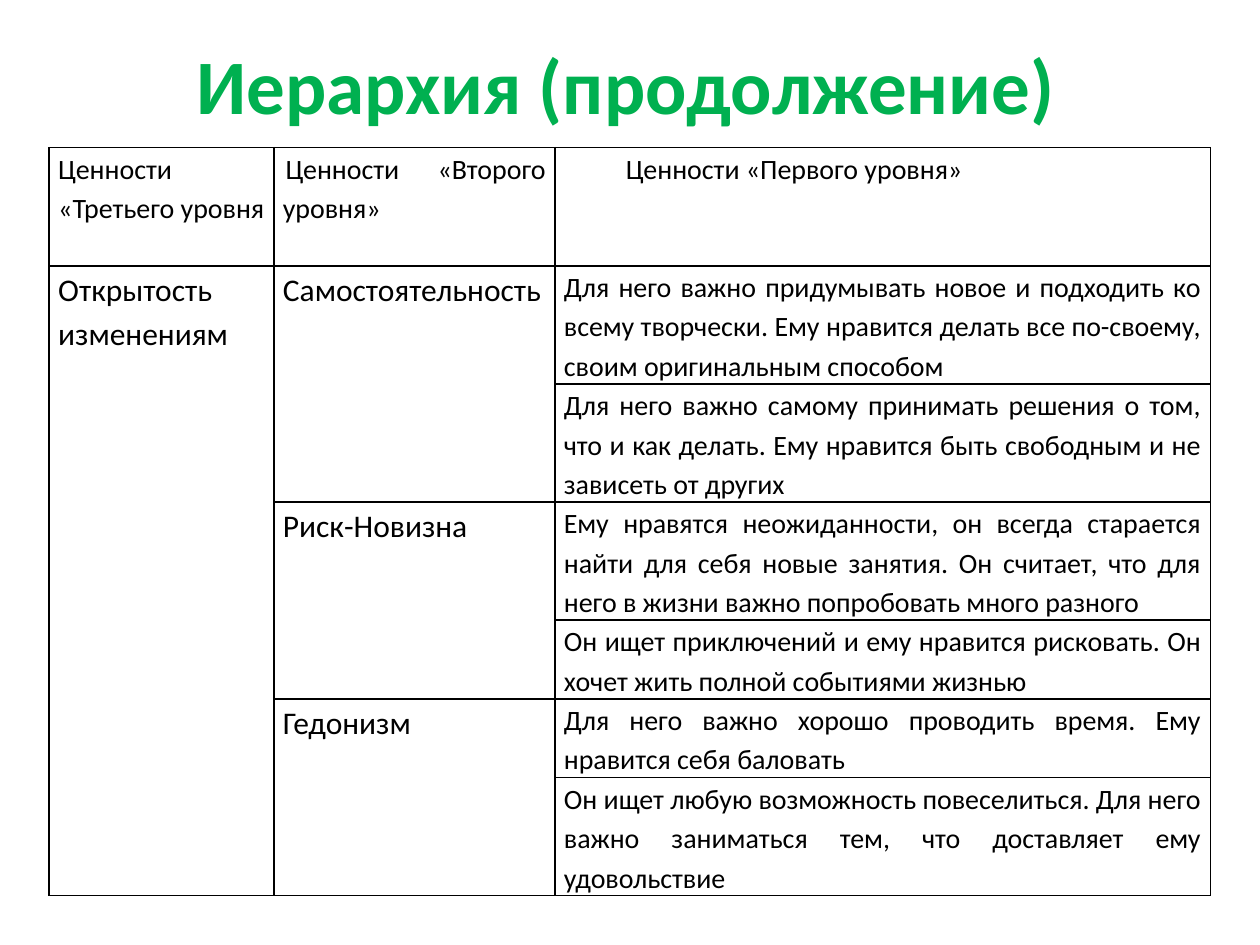
import pptx
import pptx.util
import pptx.dml.color
import pptx.enum.text
from lxml import etree
from pptx.oxml.ns import qn

Pt = pptx.util.Pt
ALIGN = pptx.enum.text.PP_ALIGN
ANCHOR = pptx.enum.text.MSO_ANCHOR
GREEN = pptx.dml.color.RGBColor(0x00, 0xB0, 0x50)
BLACK = pptx.dml.color.RGBColor(0x00, 0x00, 0x00)
FONT = "Calibri"

TITLE = "Иерархия (продолжение)"
# Header text and first-line indent
HEADS = [
    ("Ценности «Третьего уровня", 0),
    ("Ценности «Второго уровня»", 1.5),
    ("Ценности «Первого уровня»", 35.4),
]
THIRD = "Открытость изменениям"
GROUPS = [
    ("Самостоятельность", [
        "Для него важно придумывать новое и подходить ко всему творчески. "
        "Ему нравится делать все по-своему, своим оригинальным способом",
        "Для него важно самому принимать решения о том, что и как делать. "
        "Ему нравится быть свободным и не зависеть от других",
    ]),
    ("Риск-Новизна", [
        "Ему нравятся неожиданности, он всегда старается найти для себя новые "
        "занятия. Он считает, что для него в жизни важно попробовать много разного",
        "Он ищет приключений и ему нравится рисковать. "
        "Он хочет жить полной событиями жизнью",
    ]),
    ("Гедонизм", [
        "Для него важно хорошо проводить время. Ему нравится себя баловать",
        "Он ищет любую возможность повеселиться. Для него важно заниматься тем, "
        "что доставляет ему удовольствие",
    ]),
]
COLS = [128.4, 160.6, 374.6]
LINES = [3, 3, 3, 3, 2, 2, 3]
LINE = 22.5
LEFT, TOP = 28.1, 84.4


def write(frame, text, size=16, color=BLACK, bold=False,
          align=ALIGN.JUSTIFY, space=1.15, indent=0):
    par = frame.paragraphs[0]
    par.alignment = align
    par.line_spacing = space
    props = par._p.get_or_add_pPr()
    props.set("marL", "0")
    props.set("indent", str(int(Pt(indent))))
    run = par.add_run()
    run.text = text
    font = run.font
    font.name, font.size, font.bold = FONT, Pt(size), bold
    font.color.rgb = color


def style(cell):
    """Set narrow margins, no fill and a thin black border on every side."""
    cell.margin_left = cell.margin_right = Pt(5.2)
    cell.margin_top = cell.margin_bottom = 0
    cell.vertical_anchor = ANCHOR.TOP
    props = cell._tc.get_or_add_tcPr()
    for side in ("lnL", "lnR", "lnT", "lnB"):
        line = etree.SubElement(props, qn("a:" + side), w=str(int(Pt(1))))
        fill = etree.SubElement(line, qn("a:solidFill"))
        etree.SubElement(fill, qn("a:srgbClr"), val=str(BLACK))
    cell.fill.background()


def main():
    deck = pptx.Presentation()
    deck.slide_width, deck.slide_height = Pt(720), Pt(540)
    slide = deck.slides.add_slide(deck.slide_layouts[5])

    title = slide.shapes.title
    title.left, title.top = Pt(33.8), Pt(16.6)
    title.width, title.height = Pt(648), Pt(62)
    title.text_frame.vertical_anchor = ANCHOR.MIDDLE
    write(title.text_frame, TITLE, size=44, color=GREEN, bold=True,
          align=ALIGN.CENTER, space=1.0)

    grid = slide.shapes.add_table(
        len(LINES), len(COLS), Pt(LEFT), Pt(TOP),
        Pt(sum(COLS)), Pt(sum(LINES) * LINE)).table
    grid.first_row = grid.horz_banding = False
    for col, width in zip(grid.columns, COLS):
        col.width = Pt(width)
    for row, count in zip(grid.rows, LINES):
        row.height = Pt(count * LINE)
    for cell in grid.iter_cells():
        style(cell)

    for col, (text, indent) in enumerate(HEADS):
        write(grid.cell(0, col).text_frame, text, indent=indent)
    grid.cell(1, 0).merge(grid.cell(len(LINES) - 1, 0))
    write(grid.cell(1, 0).text_frame, THIRD, size=18)
    row = 1
    for name, items in GROUPS:
        grid.cell(row, 1).merge(grid.cell(row + len(items) - 1, 1))
        write(grid.cell(row, 1).text_frame, name, size=18)
        for text in items:
            write(grid.cell(row, 2).text_frame, text)
            row += 1

    deck.save("out.pptx")


if __name__ == "__main__":
    main()
